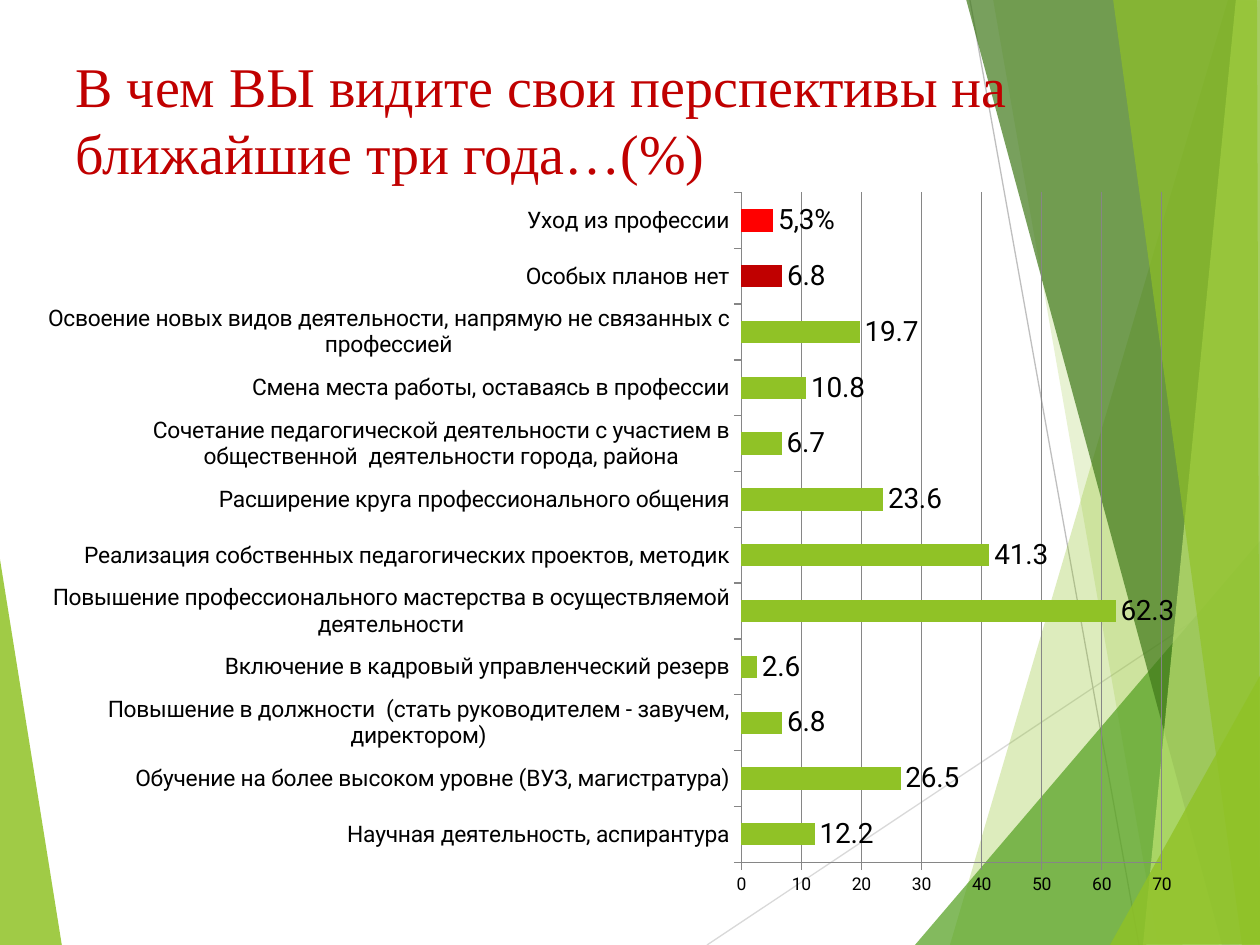
from lxml import etree
from pptx import Presentation, util as u
from pptx.chart.data import CategoryChartData
from pptx.dml.color import RGBColor
from pptx.enum import chart as charts, shapes, text
from pptx.oxml.ns import qn

PX = 914400 / 126
WIDTH, HEIGHT = 1260, 945
LIME = RGBColor(0x90, 0xC2, 0x26)
GREEN = RGBColor(0x54, 0xA0, 0x21)
FOREST = RGBColor(0x3F, 0x78, 0x19)
PALE = RGBColor(0xC0, 0xE4, 0x74)
SILVER = RGBColor(0xD9, 0xD9, 0xD9)
GREY = RGBColor(0xBF, 0xBF, 0xBF)
AXIS = RGBColor(0x86, 0x86, 0x86)
BLACK = RGBColor(0, 0, 0)
CRIMSON = RGBColor(0xC0, 0, 0)
RED = RGBColor(0xFF, 0, 0)

LINES = [((707, 945), (1261, 576), SILVER), ((970, 0), (1139, 945), GREY)]
FACETS = [
    ([(-1, 553), (62, 946), (-1, 945)], LIME, 85),
    ([(1228, 0), (950, 945), (1262, 946), (1261, 1)], LIME, 30),
    ([(993, -1), (1158, 945), (1261, 945), (1261, -1)], LIME, 20),
    ([(915, 945), (1260, 541), (1261, 945)], GREEN, 72),
    ([(966, -1), (1222, 945), (1261, 944), (1261, -1)], FOREST, 70),
    ([(1236, -1), (1143, 945), (1261, 945), (1260, -1)], PALE, 70),
    ([(1113, -1), (1242, 945), (1260, 945), (1257, -1)], LIME, 65),
    ([(1110, 945), (1261, 674), (1261, 944)], LIME, 80),
]
PLANS = [
    ("Научная деятельность, аспирантура", 12.2),
    ("Обучение на более высоком уровне (ВУЗ, магистратура)", 26.5),
    ("Повышение в должности  (стать руководителем - завучем, директором)", 6.8),
    ("Включение в кадровый управленческий резерв", 2.6),
    ("Повышение профессионального мастерства в осуществляемой деятельности", 62.3),
    ("Реализация собственных педагогических проектов, методик", 41.3),
    ("Расширение круга профессионального общения", 23.6),
    ("Сочетание педагогической деятельности с участием в "
     "общественной  деятельности города, района", 6.7),
    ("Смена места работы, оставаясь в профессии", 10.8),
    ("Освоение новых видов деятельности, напрямую не связанных с профессией", 19.7),
    ("Особых планов нет", 6.8),
    ("Уход из профессии", 5.3),
]


def px(length):
    return round(length * PX)


def format_font(font, size, color=BLACK, name="Roboto"):
    font.size, font.name, font.bold = u.Pt(size), name, False
    font.color.rgb = color


def write(frame, words, **style):
    para = frame.paragraphs[0]
    para.alignment = text.PP_ALIGN.LEFT
    span = para.add_run()
    span.text = words
    format_font(span.font, **style)
    return para


class Painter:
    """Draws the elements of one slide in a shared style."""

    def __init__(self, page):
        self.page = page

    def facet(self, points, color, opacity):
        builder = self.page.shapes.build_freeform(*points[0], scale=PX)
        builder.add_line_segments(points[1:], close=True)
        shape = builder.convert_to_shape()
        shape.shadow.inherit = False
        shape.line.fill.background()
        shape.fill.solid()
        shape.fill.fore_color.rgb = color
        tint = shape._element.spPr.find(qn("a:solidFill"))[0]
        etree.SubElement(tint, qn("a:alpha")).set("val", str(opacity * 1000))

    def line(self, start, end, color):
        line = self.page.shapes.add_connector(
            shapes.MSO_CONNECTOR.STRAIGHT, *map(px, start + end))
        line.line.color.rgb = color
        line.line.width = u.Pt(0.75)
        etree.SubElement(line._element.spPr, qn("a:effectLst"))

    def title(self, words, left, top, width, height):
        box = self.page.shapes.title
        self.page.shapes._spTree.append(box._element)
        box.left, box.top, box.width, box.height = map(px, (left, top, width, height))
        frame = box.text_frame
        frame.word_wrap = True
        frame.auto_size = text.MSO_AUTO_SIZE.NONE
        frame.vertical_anchor = text.MSO_ANCHOR.TOP
        frame.margin_top = px(13)
        para = write(frame, words, size=32, color=CRIMSON, name="Times New Roman")
        para.line_spacing = 1.0

    def bars(self, rows, left, top, width, height, plot, colors, captions):
        data = CategoryChartData()
        data.categories = [name for name, _ in rows]
        data.add_series("Series 1", [value for _, value in rows])
        chart = self.page.shapes.add_chart(
            charts.XL_CHART_TYPE.BAR_CLUSTERED,
            *map(px, (left, top, width, height)), data).chart
        chart.has_legend = chart.has_title = False
        format_font(chart.font, 10)
        for axis, size in ((chart.category_axis, 13), (chart.value_axis, 10)):
            axis.major_tick_mark = charts.XL_TICK_MARK.OUTSIDE
            axis.format.line.color.rgb = AXIS
            format_font(axis.tick_labels.font, size)
        value_axis = chart.value_axis
        value_axis.minimum_scale, value_axis.maximum_scale = 0, 70
        value_axis.major_unit = 10
        value_axis.has_major_gridlines = True
        value_axis.major_gridlines.format.line.color.rgb = AXIS
        bar_plot = chart.plots[0]
        bar_plot.gap_width, bar_plot.vary_by_categories = 150, False
        series = bar_plot.series[0]
        series.format.fill.solid()
        series.format.fill.fore_color.rgb = LIME
        labels = series.data_labels
        labels.show_value = True
        labels.position = charts.XL_LABEL_POSITION.OUTSIDE_END
        format_font(labels.font, 16)
        for index, color in colors.items():
            fill = series.points[index].format.fill
            fill.solid()
            fill.fore_color.rgb = color
        for index, caption in captions.items():
            label = series.points[index].data_label
            write(label.text_frame, caption, size=16)
            label.position = charts.XL_LABEL_POSITION.OUTSIDE_END
        self.place_plot(chart, plot)

    def place_plot(self, chart, plot):
        area = chart._chartSpace.chart.plotArea
        for old in area.findall(qn("c:layout")):
            area.remove(old)
        layout = etree.Element(qn("c:layout"))
        manual = etree.SubElement(layout, qn("c:manualLayout"))
        settings = [("layoutTarget", "inner"), ("xMode", "edge"), ("yMode", "edge")]
        for tag, value in settings + list(zip("xywh", plot)):
            etree.SubElement(manual, qn("c:" + tag)).set("val", str(value))
        area.insert(0, layout)


def main():
    deck = Presentation()
    deck.slide_width, deck.slide_height = px(WIDTH), px(HEIGHT)
    painter = Painter(deck.slides.add_slide(deck.slide_layouts[5]))
    painter.facet(*FACETS[0])
    for line in LINES:
        painter.line(*line)
    for facet in FACETS[1:]:
        painter.facet(*facet)
    painter.title("В чем ВЫ видите свои перспективы на  ближайшие три года…(%)",
                  63, 38, 1134, 110)
    painter.bars(PLANS, 29, 178, 1168, 728, plot=(0.61, 0.02, 0.36, 0.92),
                 colors={10: CRIMSON, 11: RED}, captions={11: "5,3%"})
    deck.save("out.pptx")


if __name__ == "__main__":
    main()
